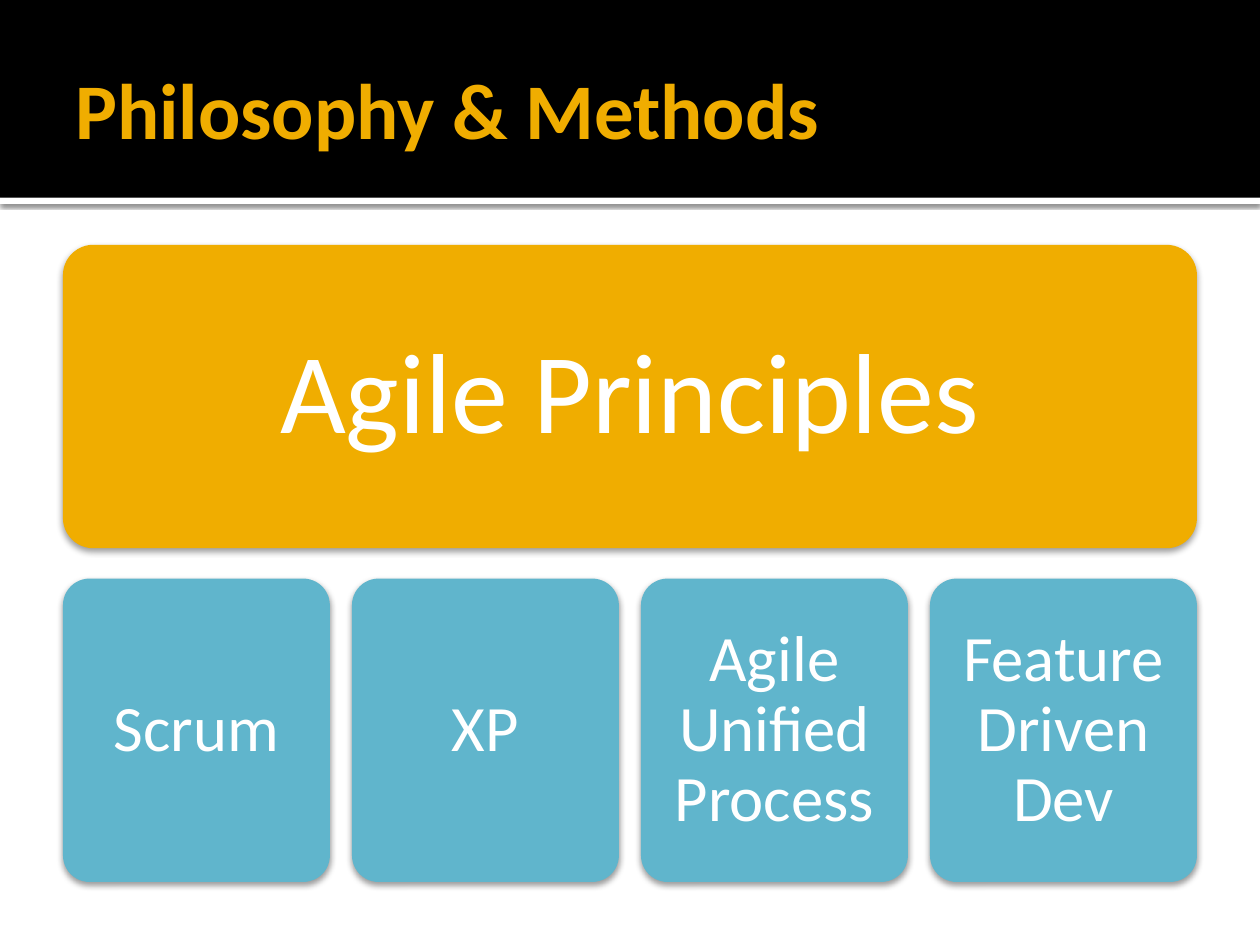
from lxml.etree import SubElement
from pptx import Presentation
from pptx.dml.color import RGBColor
from pptx.enum.shapes import MSO_SHAPE
from pptx.enum.text import MSO_ANCHOR, PP_ALIGN
from pptx.oxml.ns import qn
from pptx.util import Pt

FONT = "Calibri"
BLACK, WHITE, AMBER, BLUE = "000000", "FFFFFF", "F0AD00", "60B5CC"
METHODS = ["Scrum", "XP", "Agile Unified Process", "Feature Driven Dev"]


def color(hex_string):
    return RGBColor.from_string(hex_string)


def add_shadow(shape, opacity, blur, distance):
    """Add a soft black shadow that falls straight down."""
    effects = shape._element.spPr.find(qn("a:effectLst"))
    shadow = SubElement(effects, qn("a:outerShdw"), blurRad=str(Pt(blur)),
                        dist=str(Pt(distance)), dir="5400000",
                        algn="t", rotWithShape="0")
    black = SubElement(shadow, qn("a:srgbClr"), val=BLACK)
    SubElement(black, qn("a:alpha"), val=str(opacity * 1000))


def add_block(page, kind, left, top, width, height, fill):
    block = page.shapes.add_shape(kind, Pt(left), Pt(top), Pt(width), Pt(height))
    block.fill.solid()
    block.fill.fore_color.rgb = color(fill)
    block.line.fill.background()
    block.shadow.inherit = False
    return block


def set_text(shape, text, size, text_color, insets, align, bold=False):
    frame = shape.text_frame
    frame.text = text
    frame.word_wrap = True
    frame.vertical_anchor = MSO_ANCHOR.MIDDLE
    (frame.margin_left, frame.margin_top,
     frame.margin_right, frame.margin_bottom) = map(Pt, insets)
    para = frame.paragraphs[0]
    para.alignment = align
    font = para.runs[0].font
    font.name, font.size, font.bold = FONT, Pt(size), bold
    font.color.rgb = color(text_color)
    return para


def add_header(page, left, top, width, height, title):
    # White rule under the black band
    rule = add_block(page, MSO_SHAPE.RECTANGLE, left, top + height, width, 3.6, WHITE)
    add_shadow(rule, 60, 2.5, 0.8)
    add_block(page, MSO_SHAPE.RECTANGLE, left, top, width, height, BLACK)
    # Title
    box = page.shapes.add_textbox(Pt(left + 36), Pt(top + 12.2),
                                  Pt(width - 72), Pt(height - 14.4))
    set_text(box, title, 45, AMBER, (7.2, 3.6, 3.6, 3.6), PP_ALIGN.LEFT, bold=True)


def add_card(page, left, top, width, height, text, fill, size, inset):
    card = add_block(page, MSO_SHAPE.ROUNDED_RECTANGLE, left, top, width, height, fill)
    card.adjustments[0] = 0.1
    add_shadow(card, 38, 3.5, 2)
    # The rounded corners already narrow the text area a little
    para = set_text(card, text, size, WHITE, [inset] * 4, PP_ALIGN.CENTER)
    para.line_spacing = 0.9


def add_hierarchy(page, left, top, width, height, principle, methods):
    row_gap, column_gap = 17.3, 12.6
    row_height = (height - row_gap) / 2
    # Shared principles span the top row
    add_card(page, left, top, width, row_height, principle, AMBER, 65, 19.4)
    # Methods share the bottom row equally
    card_width = (width - column_gap * (len(methods) - 1)) / len(methods)
    for index, method in enumerate(methods):
        add_card(page, left + index * (card_width + column_gap),
                 top + row_height + row_gap, card_width, row_height,
                 method, BLUE, 37, 10)


def main():
    deck = Presentation()
    deck.slide_width, deck.slide_height = Pt(720), Pt(540)
    page = deck.slides.add_slide(deck.slide_layouts[6])
    add_header(page, 0, 0, 720, 113, "Philosophy & Methods")
    add_hierarchy(page, 36, 139.9, 648, 364.1, "Agile Principles", METHODS)
    deck.save("out.pptx")


if __name__ == "__main__":
    main()
